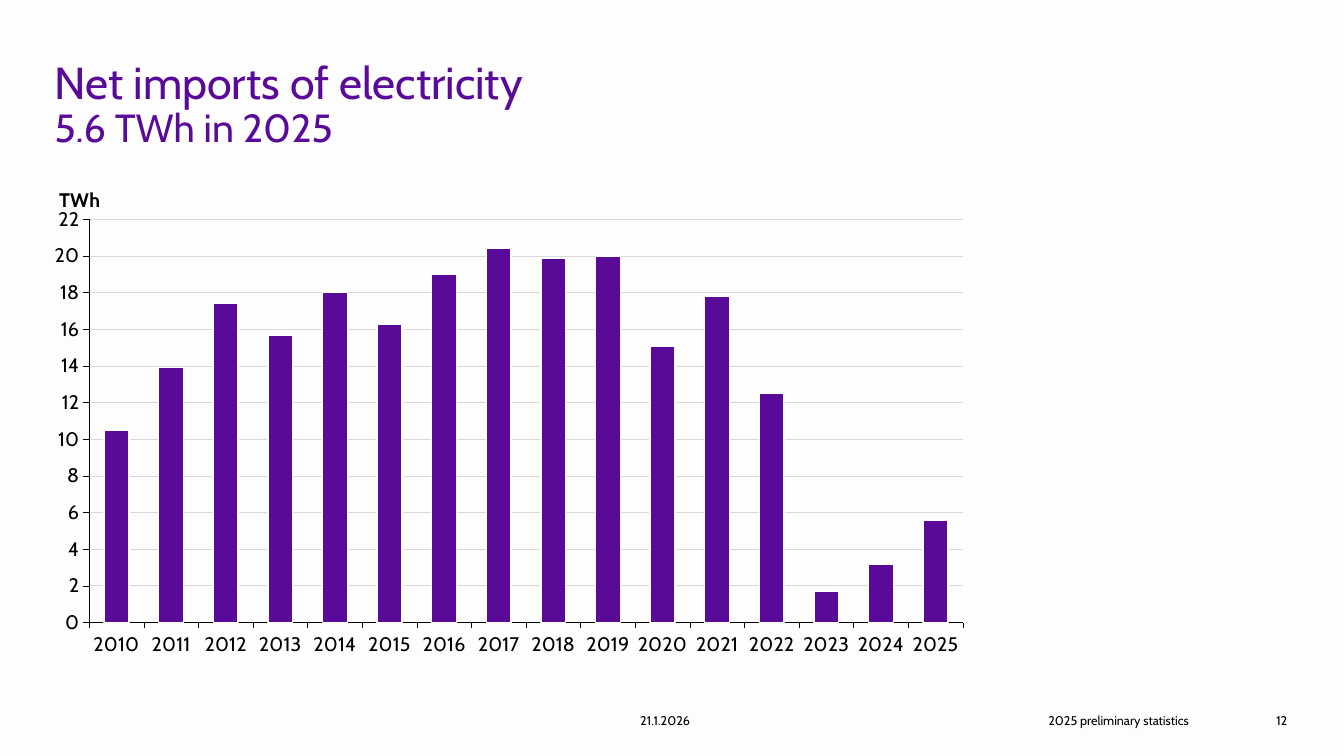
from pptx import Presentation
from pptx.chart.data import CategoryChartData
from pptx.dml.color import RGBColor
from pptx.enum.chart import XL_CHART_TYPE, XL_TICK_MARK
from pptx.enum.text import MSO_ANCHOR, PP_ALIGN
from pptx.oxml import parse_xml
from pptx.oxml.ns import nsdecls, qn
from pptx.util import Emu, Pt

COLUMN = XL_CHART_TYPE.COLUMN_CLUSTERED
OUTSIDE, NO_TICK = XL_TICK_MARK.OUTSIDE, XL_TICK_MARK.NONE
TOP, MIDDLE = MSO_ANCHOR.TOP, MSO_ANCHOR.MIDDLE
LEFT, CENTER, RIGHT = PP_ALIGN.LEFT, PP_ALIGN.CENTER, PP_ALIGN.RIGHT

PX = 9525
FONT = "Cabin"
COLORS = {"bg": "FEFDFD", "purple": "590A99", "black": "000000",
          "grid": "D9D9D9", "white": "FFFFFF"}

TITLE = [("Net imports of electricity", 32), ("5.6 TWh in 2025", 28)]
TITLE_BOX = (52, 53, 1174, 105)
FOOTERS = [
    ("21.1.2026", (580, 667, 107, 38), CENTER, 0),
    ("2025 preliminary statistics", (709, 667, 423, 38), RIGHT, 10),
    ("12", (1154, 667, 72, 38), RIGHT, 10),
]
CHART_BOX = (52, 173, 870, 456)
PLOT = {"x": 32, "y": 36, "w": 833, "h": 384}
UNIT = "TWh"
UNIT_POS = {"x": 0, "y": 1}
FIRST_YEAR = 2010
IMPORTS = [10.5, 13.9, 17.4, 15.7, 18, 16.3, 19, 20.4,
           19.9, 20, 15.1, 17.8, 12.5, 1.7, 3.2, 5.6]


def rgb(name):
    return RGBColor.from_string(COLORS[name])


def px(*values):
    return [Emu(v * PX) for v in values]


def set_font(font, size, color="black", bold=False):
    font.name, font.size, font.bold = FONT, Pt(size), bold
    font.color.rgb = rgb(color)


def add_text(s, lines, box, color="black", align=LEFT, anchor=TOP,
             left=0, right=0, spacing=1.0):
    tf = s.shapes.add_textbox(*px(*box)).text_frame
    tf.word_wrap = True
    tf.vertical_anchor = anchor
    tf.margin_left, tf.margin_right = px(left, right)
    p = tf.paragraphs[0]
    p.alignment, p.line_spacing = align, spacing
    for i, (text, size) in enumerate(lines):
        if i:
            p.add_line_break()
        r = p.add_run()
        r.text = text
        set_font(r.font, size, color)


def set_layout(parent, index, place, inner=False):
    for old in parent.findall(qn("c:layout")):
        parent.remove(old)
    target = '<c:layoutTarget val="inner"/>' if inner else ""
    modes = "".join(f'<c:{k}Mode val="edge"/>' for k in "xy")
    sizes = {"x": CHART_BOX[2], "w": CHART_BOX[2], "y": CHART_BOX[3], "h": CHART_BOX[3]}
    values = "".join(f'<c:{k} val="{v / sizes[k]:.4f}"/>' for k, v in place.items())
    parent.insert(index, parse_xml(
        f'<c:layout {nsdecls("c")}><c:manualLayout>{target}{modes}{values}'
        '</c:manualLayout></c:layout>'))


def add_imports_chart(s):
    data = CategoryChartData()
    data.categories = [str(FIRST_YEAR + i) for i in range(len(IMPORTS))]
    data.add_series("Series 1", IMPORTS)
    chart = s.shapes.add_chart(COLUMN, *px(*CHART_BOX), data).chart
    chart.has_legend = chart.has_title = False
    set_font(chart.font, 14)

    plot = chart.plots[0]
    plot.gap_width = 120
    plot.vary_by_categories = False
    bars = plot.series[0].format
    bars.fill.solid()
    bars.fill.fore_color.rgb = rgb("purple")
    bars.line.color.rgb = rgb("white")
    bars.line.width = Pt(1)

    for axis in (chart.category_axis, chart.value_axis):
        axis.major_tick_mark, axis.minor_tick_mark = OUTSIDE, NO_TICK
        axis.format.line.color.rgb = rgb("black")
        axis.format.line.width = Pt(0.25)
        set_font(axis.tick_labels.font, 14)

    axis = chart.value_axis
    axis.minimum_scale, axis.maximum_scale, axis.major_unit = 0, 22, 2
    axis.tick_labels.number_format = "General"
    axis.tick_labels.number_format_is_linked = False
    axis.has_major_gridlines = True
    grid = axis.major_gridlines.format.line
    grid.color.rgb = rgb("grid")
    grid.width = Pt(0.5)

    tf = axis.axis_title.text_frame
    r = tf.paragraphs[0].add_run()
    r.text = UNIT
    set_font(r.font, 14, bold=True)
    tf._txBody.bodyPr.set("rot", "0")
    set_layout(axis.axis_title._element, 1, UNIT_POS)
    set_layout(chart._chartSpace.chart.plotArea, 0, PLOT, inner=True)


def main():
    prs = Presentation()
    prs.slide_width, prs.slide_height = px(1280, 720)
    s = prs.slides.add_slide(prs.slide_layouts[6])
    s.background.fill.solid()
    s.background.fill.fore_color.rgb = rgb("bg")
    add_text(s, TITLE, TITLE_BOX, color="purple", right=10, spacing=0.9)
    add_imports_chart(s)
    for text, box, align, left in FOOTERS:
        add_text(s, [(text, 9)], box, align=align, anchor=MIDDLE, left=left)
    prs.save("out.pptx")


if __name__ == "__main__":
    main()
